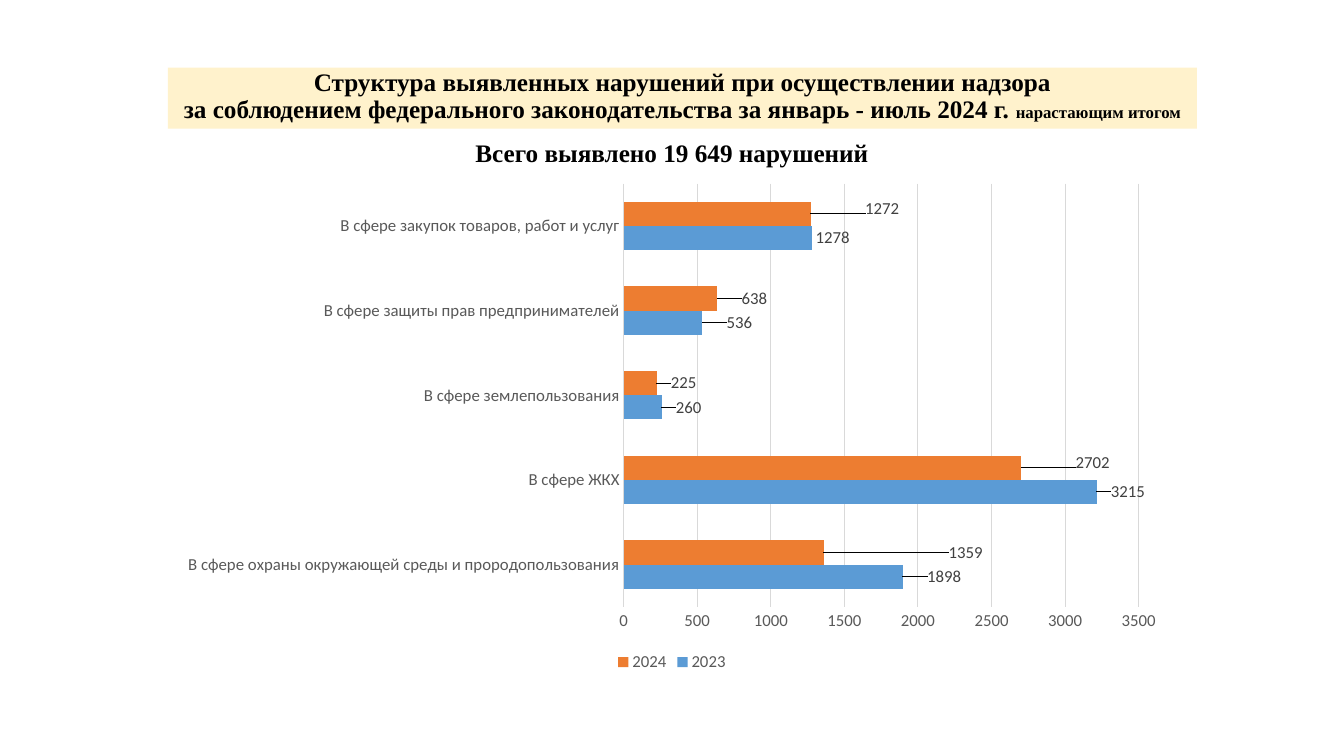
from lxml import etree
from pptx import Presentation
from pptx.chart.data import CategoryChartData
from pptx.dml.color import RGBColor
from pptx.enum.chart import XL_CHART_TYPE, XL_LABEL_POSITION, XL_LEGEND_POSITION, XL_TICK_MARK
from pptx.enum.text import MSO_ANCHOR, MSO_AUTO_SIZE, PP_ALIGN
from pptx.oxml.ns import qn
from pptx.util import Pt

BAR = XL_CHART_TYPE.BAR_CLUSTERED
OUTSIDE_END = XL_LABEL_POSITION.OUTSIDE_END
LEGEND_BOTTOM = XL_LEGEND_POSITION.BOTTOM
NO_TICK = XL_TICK_MARK.NONE
TOP, BOTTOM = MSO_ANCHOR.TOP, MSO_ANCHOR.BOTTOM
NO_FIT = MSO_AUTO_SIZE.NONE
CENTER = PP_ALIGN.CENTER


def rgb(value):
    return RGBColor.from_string(value)


def style(font, name, size, color, bold=False):
    font.name = name
    font.size = Pt(size)
    font.bold = bold
    font.color.rgb = rgb(color)


prs = Presentation()
prs.slide_width, prs.slide_height = Pt(960), Pt(540)
s = prs.slides.add_slide(prs.slide_layouts[0])

title, subtitle = s.placeholders
title.fill.solid()
title.fill.fore_color.rgb = rgb("FFF2CC")

headings = [
    (title, (120, 48.4, 735, 43.6), BOTTOM, 0.9, [
        ("Структура выявленных нарушений при осуществлении надзора", 18),
        None,
        ("за соблюдением федерального законодательства за январь - июль 2024 г. ", 18),
        ("нарастающим итогом", 12),
    ]),
    (subtitle, (120, 98.6, 720, 26), TOP, 0.8, [("Всего выявлено 19 649 нарушений", 18)]),
]
for sp, box, anchor, spacing, runs in headings:
    sp.left, sp.top, sp.width, sp.height = [Pt(v) for v in box]
    tf = sp.text_frame
    tf.word_wrap = True
    tf.auto_size = NO_FIT
    tf.vertical_anchor = anchor
    p = tf.paragraphs[0]
    p.alignment = CENTER
    p.line_spacing = spacing
    p.space_before = Pt(0)
    for run in runs:
        if run is None:
            p.add_line_break()
            continue
        r = p.add_run()
        r.text = run[0]
        style(r.font, "Times New Roman", run[1], "000000", True)

data = CategoryChartData()
data.categories = [
    "В сфере охраны окружающей среды и прородопользования",
    "В сфере ЖКХ",
    "В сфере землепользования",
    "В сфере защиты прав предпринимателей",
    "В сфере закупок товаров, работ и услуг",
]
data.add_series("2023", [1898, 3215, 260, 536, 1278])
data.add_series("2024", [1359, 2702, 225, 638, 1272])
chart = s.shapes.add_chart(BAR, Pt(120), Pt(124), Pt(720), Pt(359), data).chart
chart.has_title = False
style(chart.font, "Calibri", 10, "000000")
chart.has_legend = True
chart.legend.position = LEGEND_BOTTOM
chart.legend.include_in_layout = False
style(chart.legend.font, "Calibri", 12, "595959")

for axis in (chart.category_axis, chart.value_axis):
    axis.major_tick_mark = axis.minor_tick_mark = NO_TICK
    axis.format.line.fill.background()
    style(axis.tick_labels.font, "Calibri", 12, "595959")
grid = chart.value_axis.major_gridlines.format.line
grid.color.rgb = rgb("D9D9D9")
grid.width = Pt(0.75)

plot = chart.plots[0]
plot.gap_width = 150
plot.overlap = 0
plot.vary_by_categories = False
colors = ["5B9BD5", "ED7D31"]
label_shifts = [
    [(0.02, 0), (0.01, 0), (0.01, 0), (0.02, 0), (0, 0)],
    [(0.12, 0), (0.05, -0.01), (0.01, 0), (0.02, 0), (0.05, -0.01)],
]
for series, color, shifts in zip(plot.series, colors, label_shifts):
    series.format.fill.solid()
    series.format.fill.fore_color.rgb = rgb(color)
    series.invert_if_negative = False
    labels = series.data_labels
    labels.show_value = True
    style(labels.font, "Calibri", 12, "404040")
    for i, shift in enumerate(shifts):
        label = series.points[i].data_label
        style(label.font, "Calibri", 12, "404040")
        label.position = OUTSIDE_END
        layout = etree.Element(qn("c:layout"))
        manual = etree.SubElement(layout, qn("c:manualLayout"))
        for name, value in zip("xy", shift):
            etree.SubElement(manual, qn("c:" + name)).set("val", str(value))
        labels._element.findall(qn("c:dLbl"))[i].insert(1, layout)

prs.save("out.pptx")
